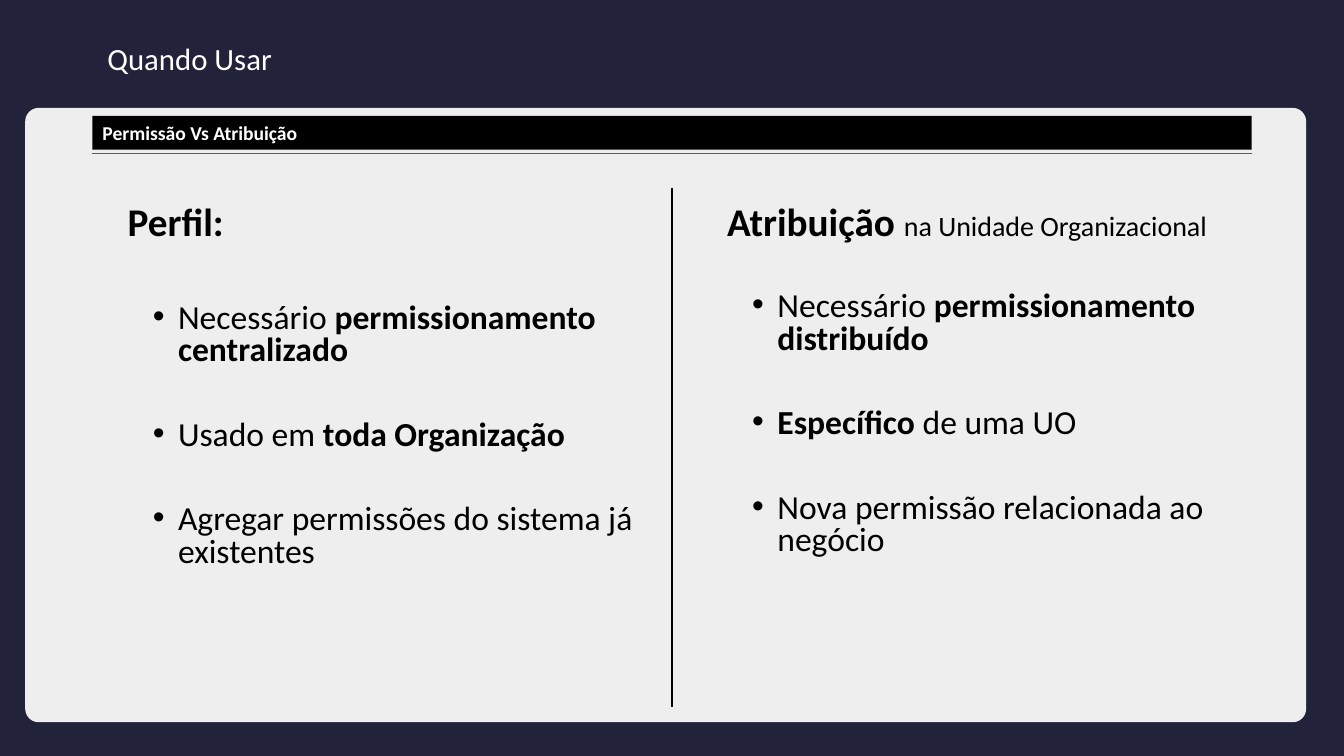
"""Builds the slide that compares permission profiles with assignments."""
import dataclasses

import lxml.etree
import pptx
import pptx.dml.color
import pptx.enum.shapes
import pptx.enum.text
import pptx.oxml.ns
import pptx.util

SHAPES = pptx.enum.shapes.MSO_SHAPE
COLUMNS, ROWS = 160, 90
SLIDE_WIDTH, SLIDE_HEIGHT = pptx.util.Inches(26.67), pptx.util.Inches(15)


@dataclasses.dataclass(frozen=True)
class Theme:
    """Colours, font and type sizes of the slide."""
    font: str = "Calibri"
    navy: str = "22223B"
    panel: str = "EEEEEE"
    black: str = "000000"
    white: str = "FFFFFF"
    rule: str = "5F5F5F"
    title: int = 44
    banner: int = 28
    heading: int = 56
    aside: int = 40
    bullet: int = 48


@dataclasses.dataclass(frozen=True)
class Box:
    """A rectangle in grid columns and rows."""
    left: float
    top: float
    width: float
    height: float

    def inner(self, left, top, width, height):
        """Return the inner box at the given offset from this one."""
        return Box(self.left + left, self.top + top, width, height)

    def place(self):
        """Return left, top, width and height as slide lengths."""
        return across(self.left), down(self.top), across(self.width), down(self.height)


THEME = Theme()


def across(columns):
    """Turn grid columns into a length."""
    return pptx.util.Emu(round(SLIDE_WIDTH * columns / COLUMNS))


def down(rows):
    """Turn grid rows into a length."""
    return pptx.util.Emu(round(SLIDE_HEIGHT * rows / ROWS))


def rgb(colour):
    """Turn a hex string into a colour."""
    return pptx.dml.color.RGBColor.from_string(colour)


def add_panel(page, kind, box, colour):
    """Add a flat filled shape without an outline."""
    panel = page.shapes.add_shape(kind, *box.place())
    panel.shadow.inherit = False
    panel.fill.solid()
    panel.fill.fore_color.rgb = rgb(colour)
    panel.line.fill.background()
    return panel


def add_rule(page, box, colour, weight):
    """Add a straight line from the box's first corner to its last."""
    left, top, width, height = box.place()
    rule = page.shapes.add_connector(
        pptx.enum.shapes.MSO_CONNECTOR.STRAIGHT, left, top, left + width, top + height)
    rule.line.color.rgb = rgb(colour)
    rule.line.width = pptx.util.Pt(weight)
    lxml.etree.SubElement(rule._element.spPr, pptx.oxml.ns.qn("a:effectLst"))


def set_frame(frame, anchor, side=0, edge=0):
    """Set wrapping, anchor and insets of a text frame."""
    frame.word_wrap = True
    frame.vertical_anchor = anchor
    frame.margin_left = frame.margin_right = across(side)
    frame.margin_top = frame.margin_bottom = down(edge)


def set_font(para, size, colour, bold=None):
    """Set the font that all spans of a paragraph share."""
    para.font.name = THEME.font
    para.font.size = pptx.util.Pt(size)
    para.font.color.rgb = rgb(colour)
    para.font.bold = bold


def set_indent(para, left, hanging=0):
    """Set the left margin and hanging indent in columns."""
    settings = para._p.get_or_add_pPr()
    settings.set("marL", str(across(left)))
    settings.set("indent", str(-across(hanging)))
    return settings


def add_bullet(para):
    """Give a paragraph a black round bullet."""
    settings = set_indent(para, 9, 3)
    colour = lxml.etree.SubElement(settings, pptx.oxml.ns.qn("a:buClr"))
    lxml.etree.SubElement(colour, pptx.oxml.ns.qn("a:srgbClr"), val=THEME.black)
    lxml.etree.SubElement(settings, pptx.oxml.ns.qn("a:buFont"), typeface="Arial")
    lxml.etree.SubElement(settings, pptx.oxml.ns.qn("a:buChar"), char="•")


def add_spans(para, spans):
    """Add text spans, each with its own weight."""
    for text, bold in spans:
        span = para.add_run()
        span.text = text
        span.font.bold = bold


def add_title(page, box, text):
    """Place the slide title in the dark band."""
    frame = page.shapes.add_textbox(*box.place()).text_frame
    set_frame(frame, pptx.enum.text.MSO_ANCHOR.MIDDLE)
    para = frame.paragraphs[0]
    para.text = text
    para.alignment = pptx.enum.text.PP_ALIGN.JUSTIFY
    set_font(para, THEME.title, THEME.white)


def add_banner(page, box, text):
    """Place the black subtitle bar and the thin rule under it."""
    add_rule(page, box.inner(0, 4.44, box.width, 0), THEME.rule, 0.75)
    frame = add_panel(page, SHAPES.RECTANGLE, box, THEME.black).text_frame
    set_frame(frame, pptx.enum.text.MSO_ANCHOR.MIDDLE, 1.2, 0.6)
    para = frame.paragraphs[0]
    para.text = text
    para.alignment = pptx.enum.text.PP_ALIGN.LEFT
    set_font(para, THEME.banner, THEME.white, True)


def add_column(page, box, heading, aside, first_gap, bullets):
    """Place one side of the comparison: a heading and its bullets."""
    frame = page.shapes.add_textbox(*box.place()).text_frame
    set_frame(frame, pptx.enum.text.MSO_ANCHOR.TOP, 1.2, 0.6)
    para = frame.paragraphs[0]
    para.line_spacing = 0.8
    set_indent(para, 3)
    set_font(para, THEME.heading, THEME.black)
    add_spans(para, [(heading, True)])
    if aside:
        add_spans(para, [(aside, False)])
        para.runs[-1].font.size = pptx.util.Pt(THEME.aside)
    for index, spans in enumerate(bullets):
        para = frame.add_paragraph()
        para.level = 1
        para.line_spacing = 0.8
        para.space_before = pptx.util.Pt(75 if index else first_gap)
        add_bullet(para)
        set_font(para, THEME.bullet, THEME.black)
        add_spans(para, spans)


def add_comparison(page, box):
    """Place the two columns and the divider between them."""
    width, height = 66.65, 57.12
    left = box.inner(0, 1.56, width, height)
    right = box.inner(box.width - width, 1.56, width, height)
    add_column(page, left, "Perfil:", "", 85, [
        [("Necessário ", False), ("permissionamento centralizado", True)],
        [("Usado em ", False), ("toda Organização", True)],
        [("Agregar permissões do sistema já existentes", False)],
    ])
    add_column(page, right, "Atribuição ", "na Unidade Organizacional", 69, [
        [("Necessário ", False), ("permissionamento distribuído", True)],
        [("Específico ", True), ("de uma UO", False)],
        [("Nova permissão relacionada ao negócio", False)],
    ])
    add_rule(page, box.inner(box.width / 2, 0, 0, box.height), THEME.black, 3)


def main():
    """Build and save the deck."""
    deck = pptx.Presentation()
    deck.slide_width, deck.slide_height = SLIDE_WIDTH, SLIDE_HEIGHT
    page = deck.slides.add_slide(deck.slide_layouts[6])
    page.background.fill.solid()
    page.background.fill.fore_color.rgb = rgb(THEME.white)
    add_panel(page, SHAPES.RECTANGLE, Box(0, 0, COLUMNS, ROWS), THEME.navy)
    card = add_panel(page, SHAPES.ROUNDED_RECTANGLE, Box(3, 12.84, 152.5, 73.14), THEME.panel)
    card.adjustments[0] = 0.022
    add_banner(page, Box(11, 13.8, 138, 4.02), "Permissão Vs Atribuição")
    add_comparison(page, Box(11, 22.38, 138, 61.74))
    add_title(page, Box(12.78, 2.88, 96, 8.04), "Quando Usar")
    deck.save("out.pptx")


if __name__ == "__main__":
    main()
